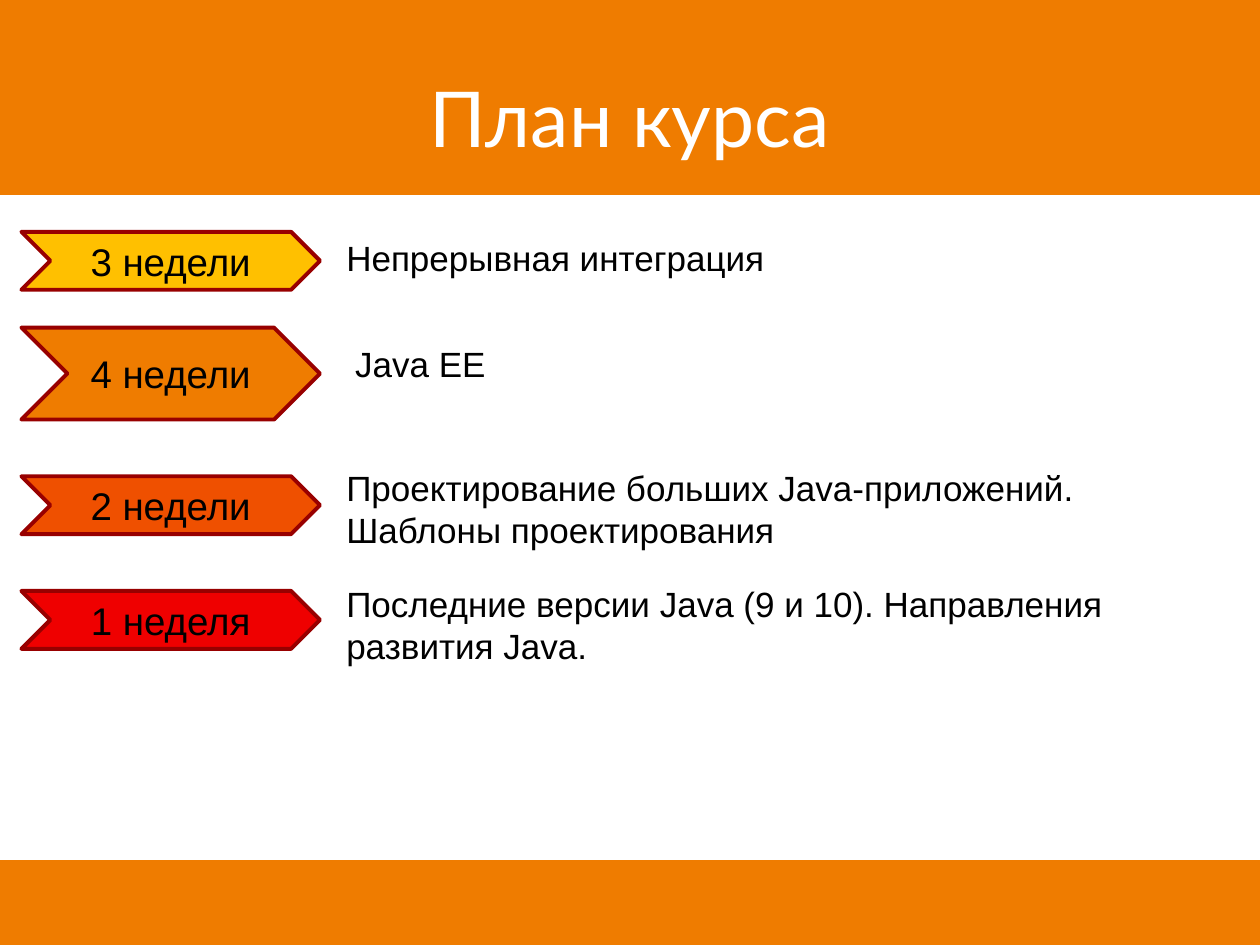
"""Build the course plan slide: one chevron and one topic per stage."""
import pptx
import pptx.util
import pptx.dml.color
import pptx.enum.shapes
import pptx.enum.text

COLORS = {
    "band": "EF7C00", "paper": "FFFFFF", "ink": "000000", "outline": "980000",
    "amber": "FFC000", "orange": "EF7C00", "vermilion": "EF5000", "red": "EF0000",
}
Inches, Pt = pptx.util.Inches, pptx.util.Pt
SHAPE = pptx.enum.shapes.MSO_SHAPE
ALIGN = pptx.enum.text.PP_ALIGN
ANCHOR = pptx.enum.text.MSO_ANCHOR


def rgb(name):
    return pptx.dml.color.RGBColor.from_string(COLORS[name])


def write(shape, text, size, font="Arial", color="ink", align=ALIGN.LEFT,
          anchor=ANCHOR.TOP, inset=0.1):
    frame = shape.text_frame
    frame.word_wrap = True
    frame.auto_size = pptx.enum.text.MSO_AUTO_SIZE.NONE
    frame.vertical_anchor = anchor
    frame.margin_left = frame.margin_right = Inches(0.1)
    frame.margin_top = frame.margin_bottom = Inches(inset)
    paragraph = frame.paragraphs[0]
    paragraph.alignment = align
    run = paragraph.add_run()
    run.text = text
    run.font.size = Pt(size)
    run.font.name = font
    run.font.color.rgb = rgb(color)


deck = pptx.Presentation()
deck.slide_width, deck.slide_height = Inches(10), Inches(7.5)
slide = deck.slides.add_slide(deck.slide_layouts[5])
slide.background.fill.solid()
slide.background.fill.fore_color.rgb = rgb("paper")

heading = slide.shapes.title
heading.left, heading.top = Inches(0.5), Inches(0.3)
heading.width, heading.height = deck.slide_width - 2 * heading.left, Inches(1.25)
write(heading, "План курса", 44, font="Lato", color="paper", align=ALIGN.CENTER,
      anchor=ANCHOR.MIDDLE, inset=0.05)

for top, height in [(6.83, 0.67), (-0.03, 1.57)]:
    band = slide.shapes.add_shape(
        SHAPE.RECTANGLE, 0, Inches(top), deck.slide_width, Inches(height))
    band.shadow.inherit = False
    band.fill.solid()
    band.fill.fore_color.rgb = band.line.color.rgb = rgb("band")
    band.line.width = Pt(1)
    heading.element.addprevious(band.element)

STAGE_LEFT, STAGE_WIDTH = Inches(0.17), Inches(2.37)
TOPIC_WIDTH, TOPIC_HEIGHT = Inches(7.07), Inches(0.82)
stages = [
    ("3 недели", "amber", 1.84, 0.46, "Непрерывная интеграция", 2.65, 1.78),
    ("4 недели", "orange", 2.6, 0.73, "Java EE", 2.72, 2.62),
    ("2 недели", "vermilion", 3.78, 0.46,
     "Проектирование больших Java-приложений. Шаблоны проектирования", 2.65, 3.6),
    ("1 неделя", "red", 4.69, 0.46,
     "Последние версии Java (9 и 10). Направления развития Java.", 2.65, 4.52),
]
for duration, color, top, height, topic, topic_left, topic_top in stages:
    stage = slide.shapes.add_shape(
        SHAPE.CHEVRON, STAGE_LEFT, Inches(top), STAGE_WIDTH, Inches(height))
    stage.shadow.inherit = False
    stage.adjustments[0] = 0.5
    stage.fill.solid()
    stage.fill.fore_color.rgb = rgb(color)
    stage.line.color.rgb = rgb("outline")
    stage.line.width = Pt(2.25)
    write(stage, duration, 22, align=ALIGN.CENTER, anchor=ANCHOR.MIDDLE)

    description = slide.shapes.add_textbox(
        Inches(topic_left), Inches(topic_top), TOPIC_WIDTH, TOPIC_HEIGHT)
    write(description, topic, 20)

deck.save("out.pptx")
